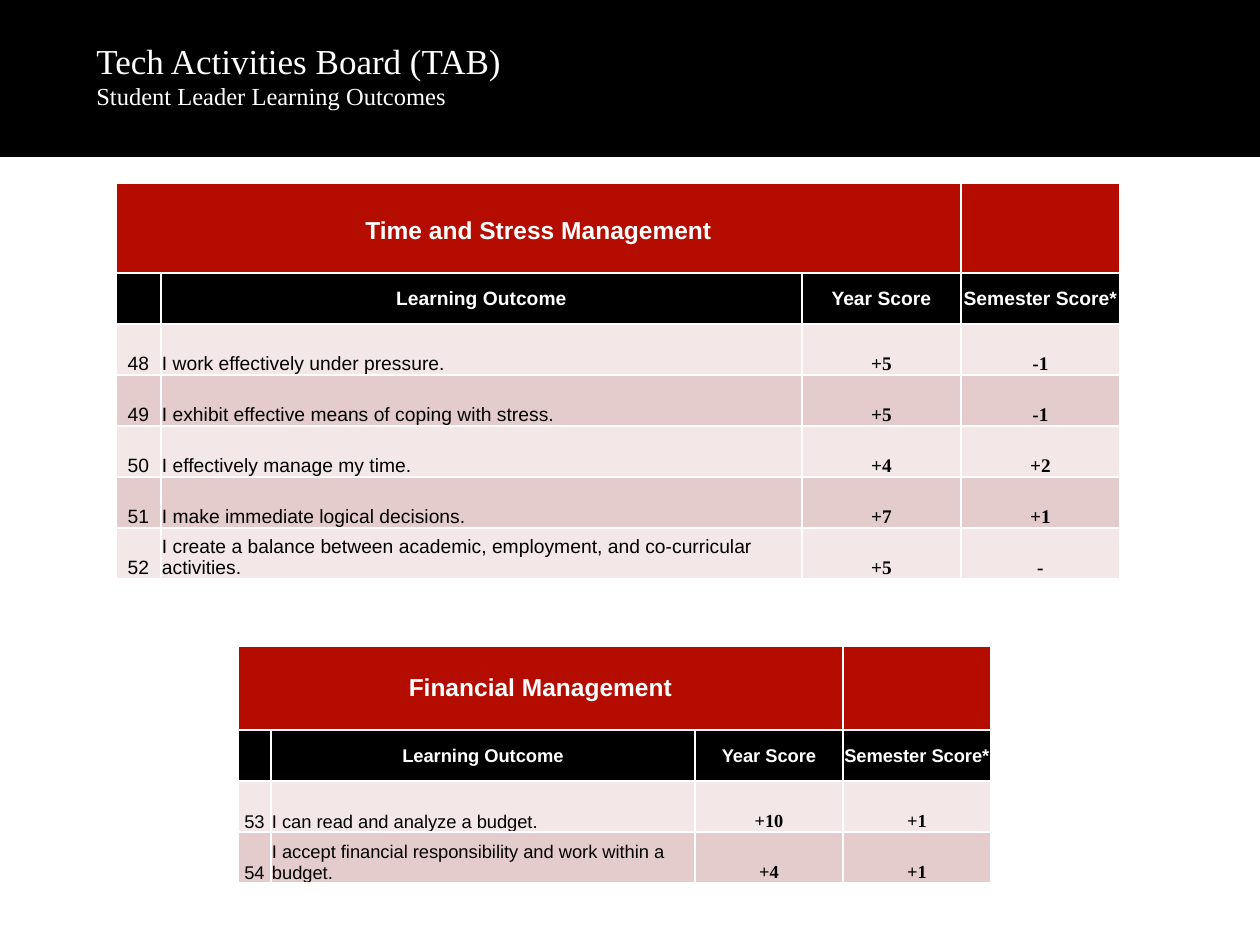
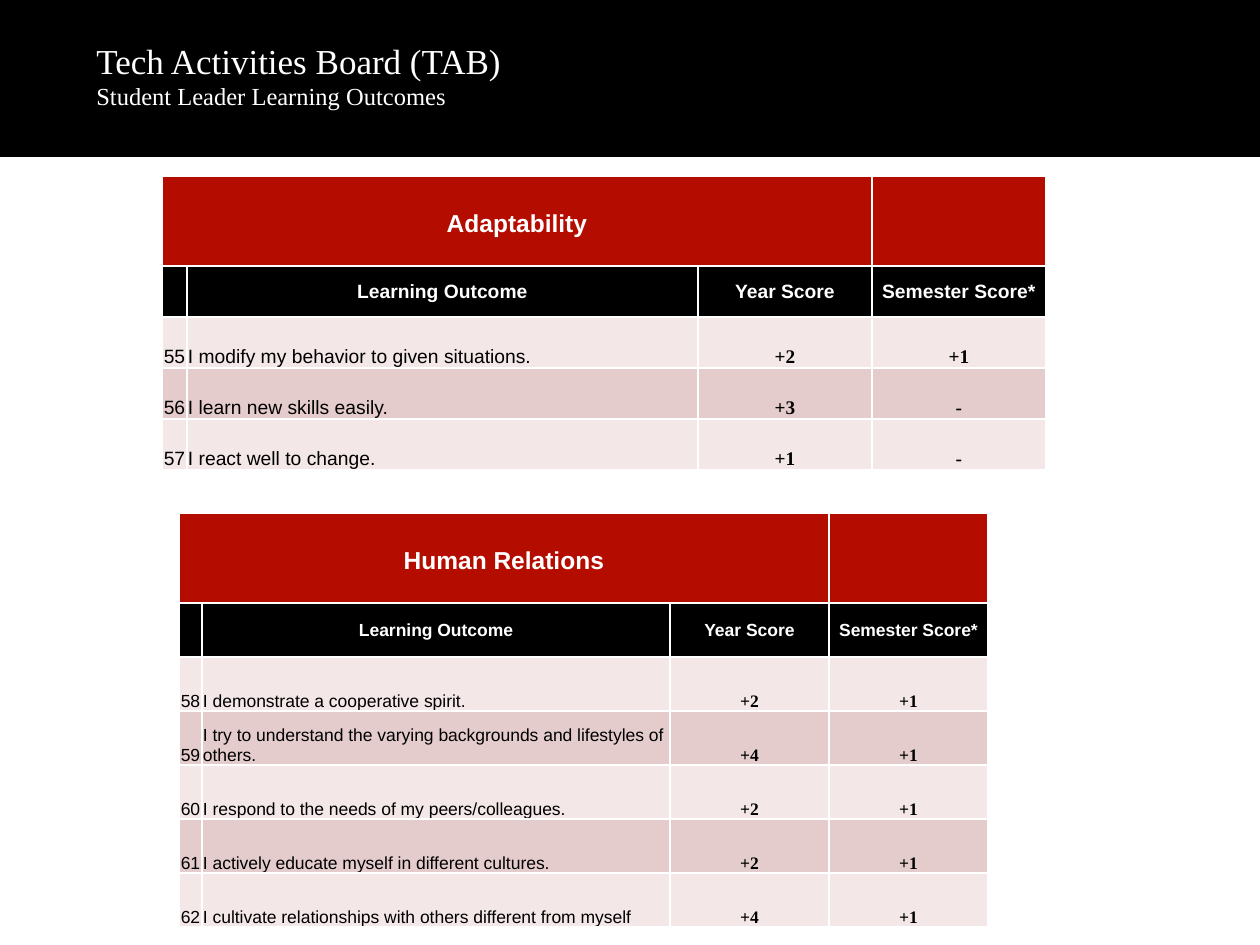
from lxml import etree
from pptx import Presentation
from pptx import util as u
from pptx.dml.color import RGBColor
from pptx.enum import shapes, text
from pptx.oxml.ns import qn

PX = u.Inches(1) / 126
BLACK, WHITE, RED = "000000", "FFFFFF", "B50C00"
STRIPES = ("F3E7E7", "E5CCCC")
SANS, SERIF = "Arial", "Times New Roman"
LEFT, CENTER = text.PP_ALIGN.LEFT, text.PP_ALIGN.CENTER
MIDDLE, BOTTOM = text.MSO_ANCHOR.MIDDLE, text.MSO_ANCHOR.BOTTOM
HEADINGS = ("", "Learning Outcome", "Year Score", "Semester Score*")
COLUMN_STYLES = ((SANS, False, CENTER), (SANS, False, LEFT),
                 (SERIF, True, CENTER), (SERIF, True, CENTER))

SLIDES = (
    (
        dict(title="Time and Stress Management", left=116, top=183,
             columns=(45, 641, 159, 159), title_height=90, row_height=51, size=11,
             first_number=48, outcomes=(
                 ("I work effectively under pressure.", "+5", "-1"),
                 ("I exhibit effective means of coping with stress.", "+5", "-1"),
                 ("I effectively manage my time.", "+4", "+2"),
                 ("I make immediate logical decisions.", "+7", "+1"),
                 ("I create a balance between academic, employment, and "
                  "co-curricular activities.", "+5", "-"))),
        dict(title="Financial Management", left=238, top=646,
             columns=(33, 424, 148, 148), title_height=84, row_height=51, size=10.5,
             first_number=53, outcomes=(
                 ("I can read and analyze a budget.", "+10", "+1"),
                 ("I accept financial responsibility and work within a budget.",
                  "+4", "+1"))),
    ),
    (
        dict(title="Adaptability", left=162, top=176,
             columns=(25, 511, 174, 174), title_height=90, row_height=51, size=11,
             first_number=55, outcomes=(
                 ("I modify my behavior to given situations.", "+2", "+1"),
                 ("I learn new skills easily.", "+3", "-"),
                 ("I react well to change.", "+1", "-"))),
        dict(title="Human Relations", left=179, top=513,
             columns=(23, 468, 159, 159), title_height=90, row_height=54, size=10,
             first_number=58, outcomes=(
                 ("I demonstrate a cooperative spirit.", "+2", "+1"),
                 ("I try to understand the varying backgrounds and lifestyles "
                  "of others.", "+4", "+1"),
                 ("I respond to the needs of my peers/colleagues.", "+2", "+1"),
                 ("I actively educate myself in different cultures.", "+2", "+1"),
                 ("I cultivate relationships with others different from myself",
                  "+4", "+1"))),
    ),
)


def px(length):
    return u.Emu(round(length * PX))


def color(value):
    return RGBColor.from_string(value)


def add_run(paragraph, words, size, font, ink, bold=False):
    run = paragraph.add_run()
    run.text = words
    run.font.size = u.Pt(size)
    run.font.name = font
    run.font.bold = bold
    run.font.color.rgb = color(ink)


def add_title_band(slide):
    band = slide.shapes.add_shape(shapes.MSO_SHAPE.RECTANGLE, 0, 0, px(1260), px(157))
    band.shadow.inherit = False
    band.fill.solid()
    band.fill.fore_color.rgb = color(BLACK)
    band.line.fill.background()
    title = slide.shapes.add_textbox(px(84), px(-4), px(1036), px(158))
    frame = title.text_frame
    frame.word_wrap = True
    frame.vertical_anchor = MIDDLE
    paragraph = frame.paragraphs[0]
    add_run(paragraph, "Tech Activities Board (TAB)", 20, SERIF, WHITE)
    paragraph.add_line_break()
    add_run(paragraph, "Student Leader Learning Outcomes", 14, SERIF, WHITE)


def add_borders(cell):
    properties = cell._tc.get_or_add_tcPr()
    for side in ("lnL", "lnR", "lnT", "lnB"):
        line = etree.SubElement(properties, qn("a:" + side), w=str(u.Pt(1)))
        fill = etree.SubElement(line, qn("a:solidFill"))
        etree.SubElement(fill, qn("a:srgbClr"), val=WHITE)


def fill_cell(cell, words, fill, ink, size, font=SANS, bold=True,
              align=CENTER, anchor=MIDDLE, margin_bottom=0):
    add_borders(cell)
    cell.fill.solid()
    cell.fill.fore_color.rgb = color(fill)
    cell.margin_left = cell.margin_right = cell.margin_top = px(1)
    cell.margin_bottom = px(margin_bottom)
    cell.vertical_anchor = anchor
    if words:
        paragraph = cell.text_frame.paragraphs[0]
        paragraph.alignment = align
        add_run(paragraph, words, size, font, ink, bold)


def add_outcome_table(slide, title, left, top, columns, title_height, row_height,
                      size, first_number, outcomes):
    heights = [title_height] + [row_height] * (len(outcomes) + 1)
    frame = slide.shapes.add_table(len(heights), len(columns), px(left), px(top),
                                   px(sum(columns)), px(sum(heights)))
    table = frame.table
    table.first_row = table.horz_banding = False
    for column, width in zip(table.columns, columns):
        column.width = px(width)
    for row, height in zip(table.rows, heights):
        row.height = px(height)

    table.cell(0, 0).merge(table.cell(0, 2))
    for index, words in enumerate((title, "", "", "")):
        fill_cell(table.cell(0, index), words, RED, WHITE, 14,
                  anchor=BOTTOM, margin_bottom=28)
    for index, words in enumerate(HEADINGS):
        fill_cell(table.cell(1, index), words, BLACK, WHITE, size)
    for offset, outcome in enumerate(outcomes):
        values = (str(first_number + offset), *outcome)
        for index, (words, style) in enumerate(zip(values, COLUMN_STYLES)):
            fill_cell(table.cell(offset + 2, index), words, STRIPES[offset % 2],
                      BLACK, size, *style, anchor=BOTTOM)


def main():
    presentation = Presentation()
    presentation.slide_width = px(1260)
    presentation.slide_height = px(945)
    for tables in SLIDES:
        slide = presentation.slides.add_slide(presentation.slide_layouts[6])
        add_title_band(slide)
        for table in tables:
            add_outcome_table(slide, **table)
    presentation.save("out.pptx")


if __name__ == "__main__":
    main()
